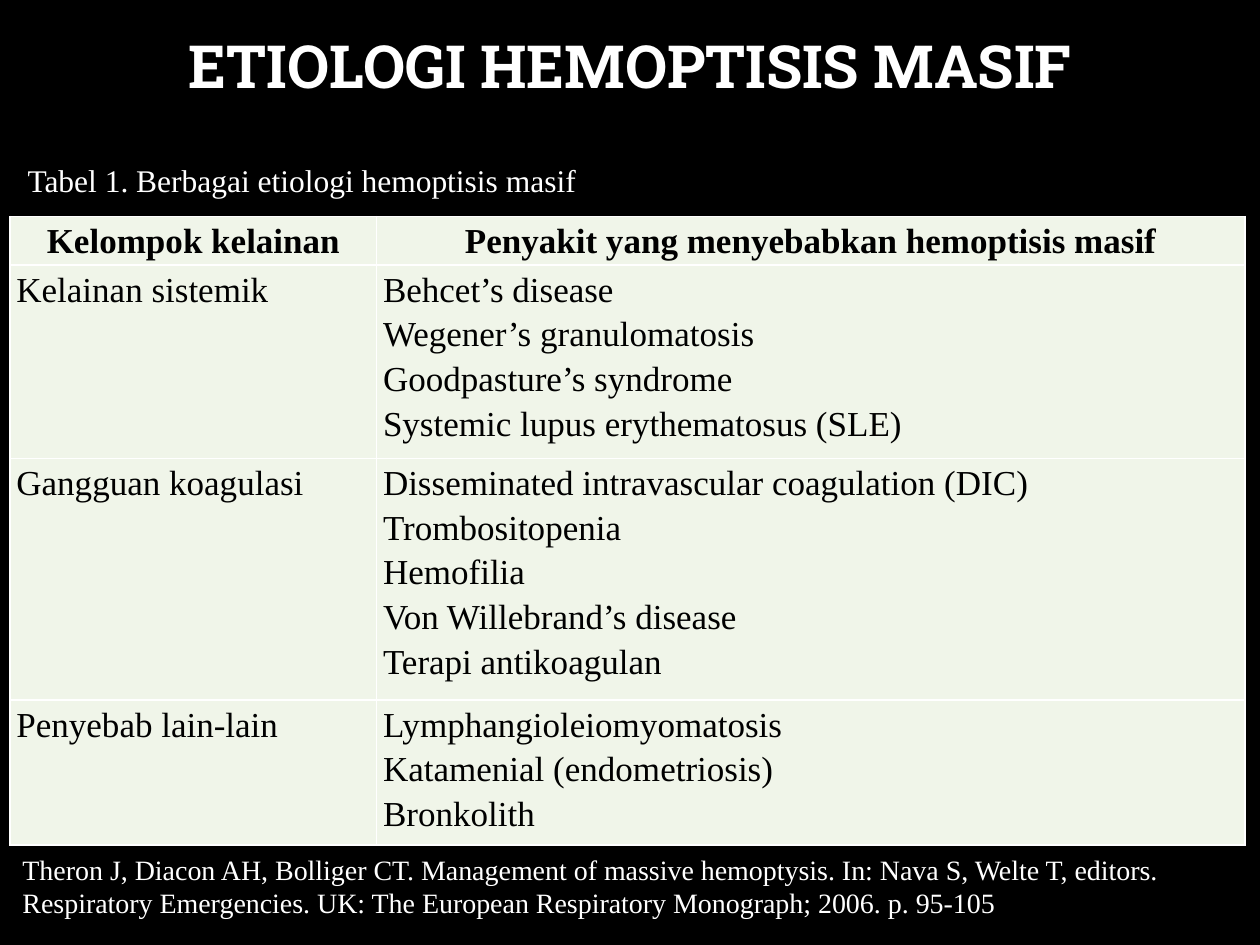
from lxml.etree import SubElement
from pptx import Presentation
from pptx.dml.color import RGBColor
from pptx.enum.text import MSO_ANCHOR as Anchor, PP_ALIGN as Align
from pptx.oxml.ns import qn
from pptx.util import Inches, Pt

TITLE = "ETIOLOGI HEMOPTISIS MASIF"
CAPTION = "Tabel 1. Berbagai etiologi hemoptisis masif"
SOURCE = (
    "Theron J, Diacon AH, Bolliger CT. Management of massive hemoptysis. "
    "In: Nava S, Welte T, editors. Respiratory Emergencies. UK: The European "
    "Respiratory Monograph; 2006. p. 95-105"
)
HEADER = ("Kelompok kelainan", ["Penyakit yang menyebabkan hemoptisis masif"])
GROUPS = [
    ("Kelainan sistemik", [
        "Behcet’s disease", "Wegener’s granulomatosis",
        "Goodpasture’s syndrome", "Systemic lupus erythematosus (SLE)"]),
    ("Gangguan koagulasi", [
        "Disseminated intravascular coagulation (DIC)", "Trombositopenia",
        "Hemofilia", "Von Willebrand’s disease", "Terapi antikoagulan"]),
    ("Penyebab lain-lain", [
        "Lymphangioleiomyomatosis", "Katamenial (endometriosis)", "Bronkolith"]),
]
WIDTH, HEIGHT = 10, 7.5
COLUMNS = (2.91, 6.89)
LINE_HEIGHT = 0.35
BLACK, WHITE, PALE_GREEN = "000000", "FFFFFF", "F0F5E9"


def color(value):
    return RGBColor.from_string(value)


def write(frame, lines, size, font="Times New Roman", ink=WHITE, bold=False,
          align=Align.LEFT, spacing=1.0):
    """Fill a text frame with one paragraph per line."""
    frame.word_wrap = True
    for index, line in enumerate(lines):
        para = frame.add_paragraph() if index else frame.paragraphs[0]
        para.alignment, para.line_spacing = align, spacing
        span = para.add_run()
        span.text = line
        span.font.name, span.font.size, span.font.bold = font, Pt(size), bold
        span.font.color.rgb = color(ink)


def add_text(page, place, text, **style):
    box = page.shapes.add_textbox(*map(Inches, place))
    box.text_frame.vertical_anchor = Anchor.MIDDLE
    write(box.text_frame, [text], **style)


def add_borders(cell, ink):
    """Draw a 1 pt line on each side; lines must precede the cell's fill."""
    props = cell._tc.get_or_add_tcPr()
    for index, side in enumerate(("a:lnL", "a:lnR", "a:lnT", "a:lnB")):
        line = SubElement(props, qn(side), w=str(Pt(1)))
        fill = SubElement(line, qn("a:solidFill"))
        SubElement(fill, qn("a:srgbClr"), val=ink)
        props.insert(index, line)


def add_etiology_table(page, left, top):
    rows = [HEADER] + GROUPS
    line_counts = [len(diseases) for _, diseases in rows]
    table = page.shapes.add_table(
        len(rows), len(COLUMNS), Inches(left), Inches(top),
        Inches(sum(COLUMNS)), Inches(sum(line_counts) * LINE_HEIGHT)).table
    for column, width in zip(table.columns, COLUMNS):
        column.width = Inches(width)
    for r, (group, diseases) in enumerate(rows):
        table.rows[r].height = Inches(line_counts[r] * LINE_HEIGHT)
        for c, lines in enumerate(([group], diseases)):
            cell = table.cell(r, c)
            cell.margin_left = cell.margin_right = Inches(0.05)
            cell.margin_top = cell.margin_bottom = 0
            cell.fill.solid()
            cell.fill.fore_color.rgb = color(PALE_GREEN)
            add_borders(cell, WHITE)
            write(cell.text_frame, lines, 20, ink=BLACK, bold=r == 0, spacing=1.15,
                  align=Align.LEFT if r else Align.CENTER)


def main():
    deck = Presentation()
    deck.slide_width, deck.slide_height = Inches(WIDTH), Inches(HEIGHT)
    page = deck.slides.add_slide(deck.slide_layouts[6])
    page.background.fill.solid()
    page.background.fill.fore_color.rgb = color(BLACK)
    add_text(page, (0, 0.19, WIDTH, 0.72), TITLE, size=34, font="Roboto Slab",
             bold=True, align=Align.CENTER, spacing=0.9)
    add_etiology_table(page, 0.08, 1.72)
    add_text(page, (0.12, 1.15, 5.91, 0.55), CAPTION, size=18)
    add_text(page, (0.08, 6.61, 9.88, 0.84), SOURCE, size=16)
    deck.save("out.pptx")


if __name__ == "__main__":
    main()
